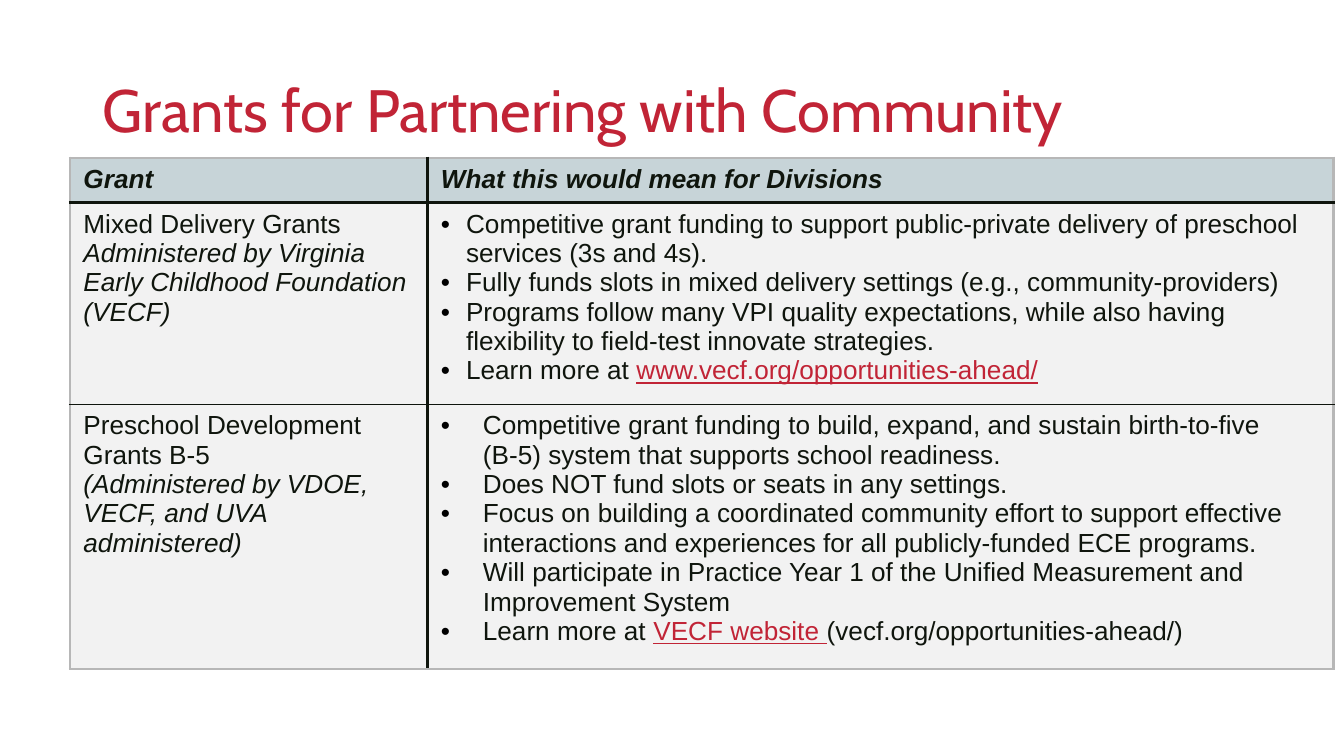
from lxml.etree import SubElement
from pptx import Presentation
from pptx.dml.color import RGBColor
from pptx.enum.text import MSO_ANCHOR
from pptx.oxml.ns import qn
from pptx.util import Pt

RED = RGBColor(0xC1, 0x24, 0x36)
INK = RGBColor(0x0F, 0x15, 0x0D)
BLACK = RGBColor(0, 0, 0)
BLUE = RGBColor(0xC7, 0xD4, 0xD8)
PALE = RGBColor(0xF2, 0xF2, 0xF2)
GREY = RGBColor(0xB7, 0xB7, 0xB7)

COLS = [191.5, 485.3]
ROWS = [23.5, 101.2, 133.2]

HEADS = ["Grant", "What this would mean for Divisions"]
# Each grant: name, who runs it, bullet indent, bullets.
# A bullet is a list of (text, is link) runs.
GRANTS = [
    ("Mixed Delivery Grants",
     "Administered by Virginia Early Childhood Foundation (VECF)",
     13.5,
     [[("Competitive grant funding to support public-private delivery of "
        "preschool services (3s and 4s).", False)],
      [("Fully funds slots in mixed delivery settings (e.g., "
        "community-providers)", False)],
      [("Programs follow many VPI quality expectations, while also having "
        "flexibility to field-test innovate strategies.", False)],
      [("Learn more at ", False),
       ("www.vecf.org/opportunities-ahead/", True)]]),
    ("Preschool Development Grants B-5",
     "(Administered by VDOE, VECF, and UVA administered)",
     22.5,
     [[("Competitive grant funding to build, expand, and sustain "
        "birth-to-five (B-5) system that supports school readiness.", False)],
      [("Does NOT fund slots or seats in any settings.", False)],
      [("Focus on building a coordinated community effort to support "
        "effective interactions and experiences for all publicly-funded ECE "
        "programs.", False)],
      [("Will participate in Practice Year 1 of the Unified Measurement and "
        "Improvement System", False)],
      [("Learn more at ", False), ("VECF website ", True),
       ("(vecf.org/opportunities-ahead/)", False)]]),
]


class Deck:
    """Holds the style and the current slide."""
    face, size = "Arial", 14

    def __init__(self, slide):
        self.slide = slide

    def run(self, para, text, color=INK, face=None, size=None, **flags):
        run = para.add_run()
        run.text = text
        font = run.font
        font.name = face or self.face
        font.size = Pt(size or self.size)
        font.color.rgb = color
        for name, value in flags.items():
            setattr(font, name, value)

    def title(self, text, x, y, w, h):
        frame = self.slide.shapes.add_textbox(
            Pt(x), Pt(y), Pt(w), Pt(h)).text_frame
        frame.word_wrap = True
        frame.vertical_anchor = MSO_ANCHOR.MIDDLE
        frame.margin_left = frame.margin_right = Pt(5.4)
        frame.margin_top = frame.margin_bottom = Pt(2.7)
        para = frame.paragraphs[0]
        para.line_spacing = 0.9
        self.run(para, text, RED, "Cabin", 32)

    def table(self, x, y, cols, rows):
        """Add a table with a tinted head row, grey rim and dark inner lines."""
        table = self.slide.shapes.add_table(
            len(rows), len(cols), Pt(x), Pt(y),
            Pt(sum(cols)), Pt(sum(rows))).table
        for col, width in zip(table.columns, cols):
            col.width = Pt(width)
        for row, height in zip(table.rows, rows):
            row.height = Pt(height)
        for r in range(len(rows)):
            for c in range(len(cols)):
                cell = table.cell(r, c)
                self.edge(cell, "a:lnL", c == 0, 1.5)
                self.edge(cell, "a:lnR", c == len(cols) - 1, 1.5)
                self.edge(cell, "a:lnT", r == 0, 1.5 if r < 2 else 1)
                self.edge(cell, "a:lnB", r == len(rows) - 1,
                          1 if r == 1 else 1.5)
                cell.fill.solid()
                cell.fill.fore_color.rgb = PALE if r else BLUE
                cell.margin_left = cell.margin_right = Pt(7.2)
                cell.margin_top = cell.margin_bottom = Pt(3.6)
        return table

    def edge(self, cell, tag, rim, width):
        line = SubElement(cell._tc.get_or_add_tcPr(), qn(tag),
                          w=str(Pt(width)))
        fill = SubElement(line, qn("a:solidFill"))
        SubElement(fill, qn("a:srgbClr"), val=str(GREY if rim else INK))

    def bullets(self, cell, items, indent):
        frame = cell.text_frame
        for i, item in enumerate(items):
            para = frame.add_paragraph() if i else frame.paragraphs[0]
            props = para._p.get_or_add_pPr()
            props.set("marL", str(Pt(indent)))
            props.set("indent", str(-Pt(indent)))
            color = SubElement(props, qn("a:buClr"))
            SubElement(color, qn("a:srgbClr"), val=str(BLACK))
            SubElement(props, qn("a:buFont"), typeface=self.face)
            SubElement(props, qn("a:buChar"), char="•")
            for text, link in item:
                self.run(para, text, RED if link else INK, underline=link)


def main():
    prs = Presentation()
    prs.slide_width, prs.slide_height = Pt(720), Pt(405)
    deck = Deck(prs.slides.add_slide(prs.slide_layouts[6]))

    deck.title("Grants for Partnering with Community", 49.7, 21.6, 620.6, 78.5)
    table = deck.table(37.5, 84.5, COLS, ROWS)
    for c, head in enumerate(HEADS):
        deck.run(table.cell(0, c).text_frame.paragraphs[0], head,
                 bold=True, italic=True)
    for r, (name, owner, indent, items) in enumerate(GRANTS, 1):
        frame = table.cell(r, 0).text_frame
        deck.run(frame.paragraphs[0], name, bold=False)
        deck.run(frame.add_paragraph(), owner, bold=False, italic=True)
        deck.bullets(table.cell(r, 1), items, indent)

    prs.save("out.pptx")


if __name__ == "__main__":
    main()
